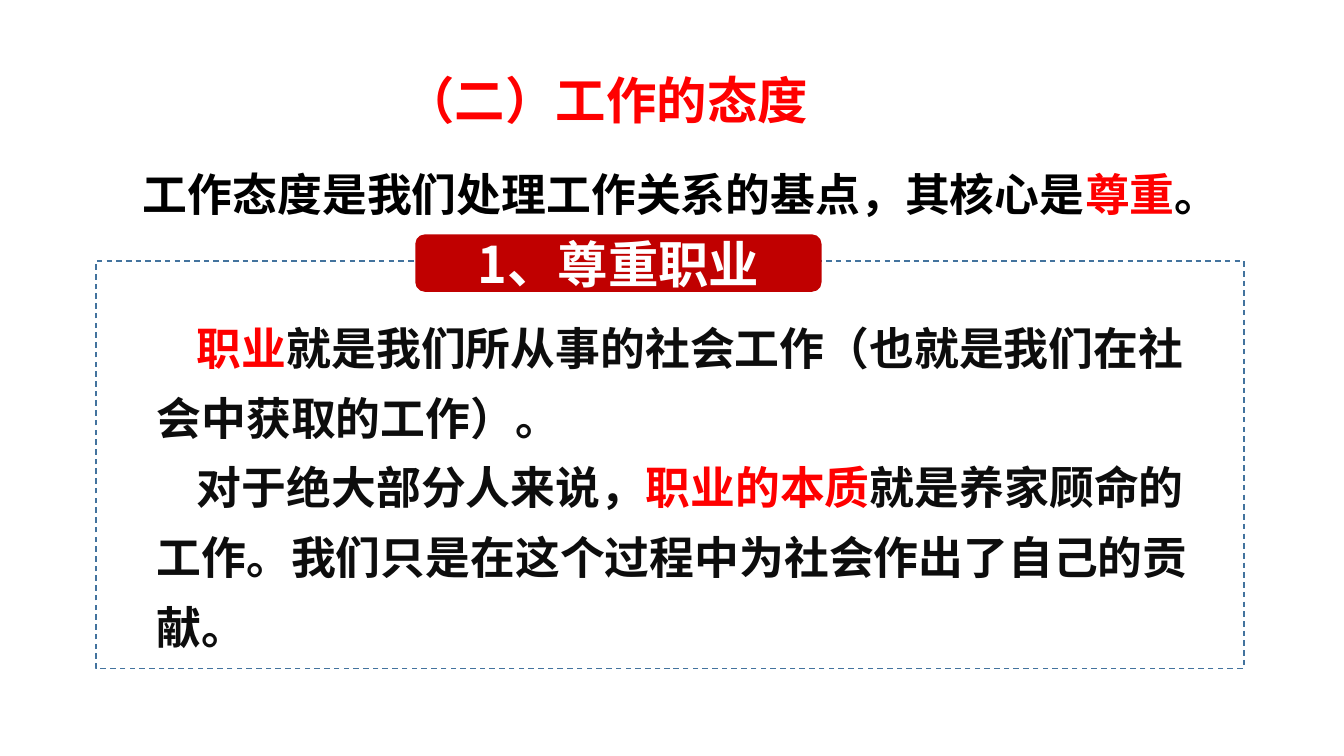
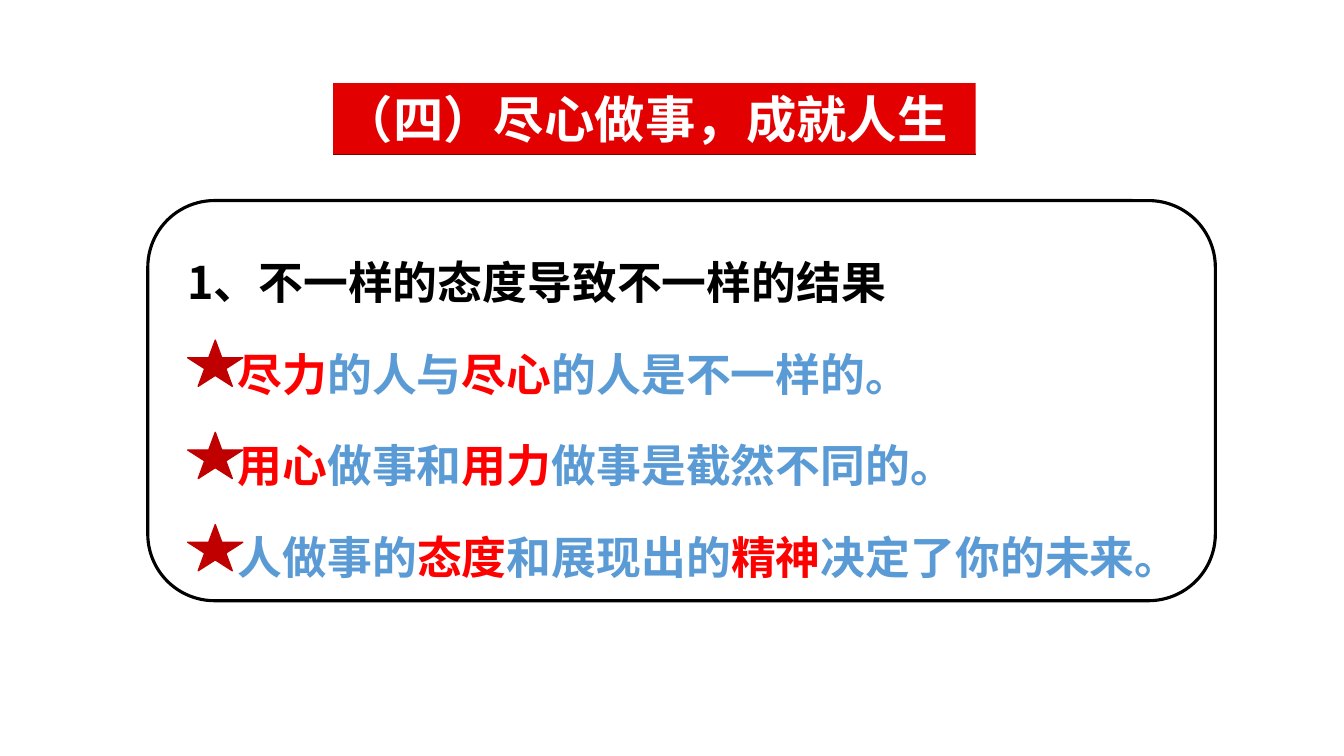
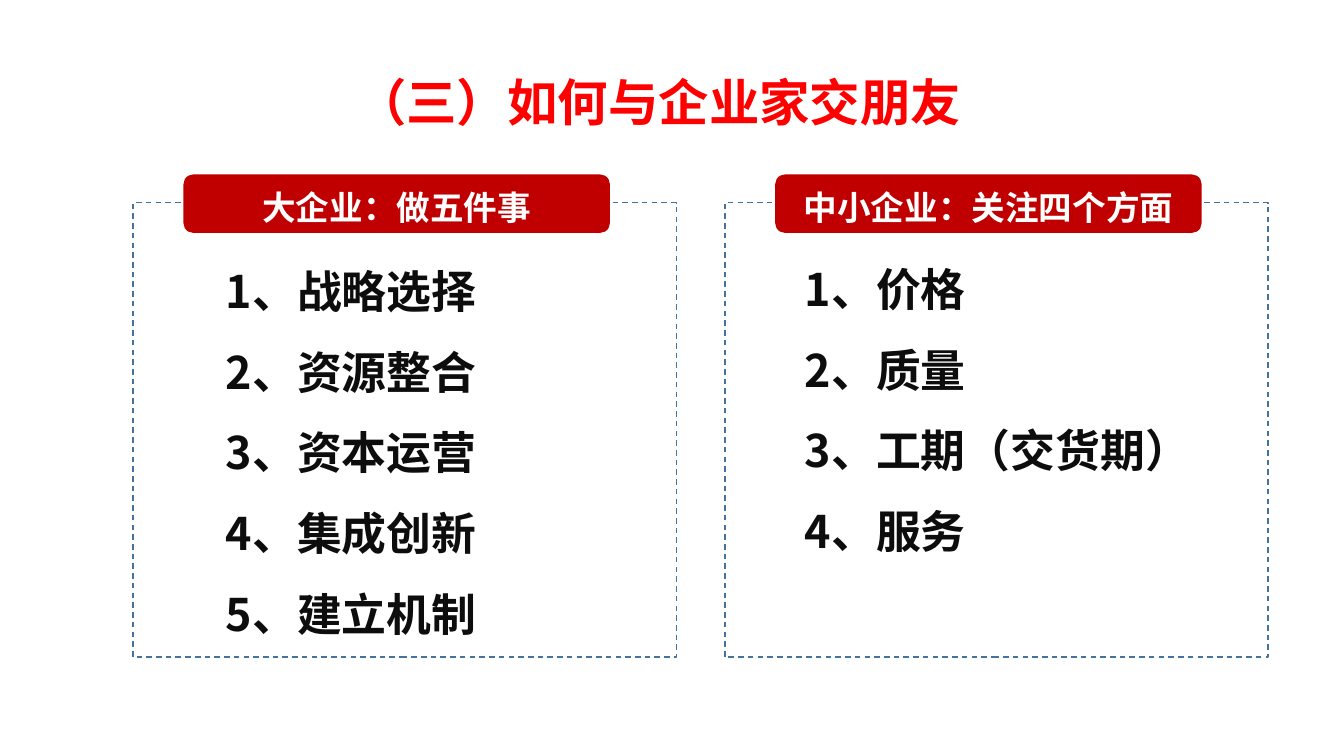
import pptx
import pptx.dml.color
import pptx.enum.dml
import pptx.enum.shapes
import pptx.enum.text
import pptx.oxml.ns
import pptx.util
from dataclasses import dataclass
from lxml import etree

SHAPE = pptx.enum.shapes.MSO_SHAPE
ALIGN = pptx.enum.text.PP_ALIGN
ANCHOR = pptx.enum.text.MSO_ANCHOR


@dataclass(frozen=True)
class Theme:
    red: str = "FF0000"
    band: str = "E30000"
    band_edge: str = "760303"
    pill: str = "C00000"
    blue: str = "5B9BD5"
    border: str = "43739E"
    black: str = "000000"
    ink: str = "0D0D0D"
    white: str = "FFFFFF"
    title_size: int = 36
    body_size: int = 32
    label_size: int = 24
    line_height: float = 1.2
    font: str = "Noto Sans CJK SC"
    latin: str = "Calibri"


THEME = Theme()


def rgb(code):
    return pptx.dml.color.RGBColor.from_string(code)


def write(frame, lines, *, color=THEME.ink, size=THEME.body_size, font=THEME.font,
          align=ALIGN.LEFT, anchor=ANCHOR.TOP, spacing=1, indent=0,
          margins=(0.1, 0.05, 0.1, 0.05)):
    """Fill a text frame; *starred* words are red, and a line may be (text, colour, left margin)."""
    frame.word_wrap = True
    frame.auto_size = pptx.enum.text.MSO_AUTO_SIZE.NONE
    frame.vertical_anchor = anchor
    (frame.margin_left, frame.margin_top,
     frame.margin_right, frame.margin_bottom) = map(pptx.util.Inches, margins)
    for index, line in enumerate(lines):
        text, line_color, left = (line, color, 0) if isinstance(line, str) else line
        paragraph = frame.add_paragraph() if index else frame.paragraphs[0]
        paragraph.alignment = align
        paragraph.space_before = pptx.util.Pt(0)
        paragraph.line_spacing = pptx.util.Pt(round(size * THEME.line_height * spacing, 1))
        properties = paragraph._p.get_or_add_pPr()
        properties.set("marL", str(pptx.util.Inches(left)))
        properties.set("indent", str(pptx.util.Inches(indent)))
        etree.SubElement(properties, pptx.oxml.ns.qn("a:buNone"))
        for part, words in enumerate(text.split("*")):
            if not words:
                continue
            run = paragraph.add_run()
            run.text = words
            run.font.size = pptx.util.Pt(size)
            run.font.bold = True
            run.font.color.rgb = rgb(THEME.red if part % 2 else line_color)
            run.font.name = font
            east_asian = etree.SubElement(run._r.get_or_add_rPr(), pptx.oxml.ns.qn("a:ea"))
            east_asian.set("typeface", THEME.font)


class Deck:
    """Holds the presentation and its current slide; places are percentages of the slide."""

    def __init__(self):
        self.show = pptx.Presentation()
        self.show.slide_width = pptx.util.Inches(13.33)
        self.show.slide_height = pptx.util.Inches(7.5)
        self.slide = None

    def box(self, left, top, width, height):
        across, down = self.show.slide_width / 100, self.show.slide_height / 100
        return int(left * across), int(top * down), int(width * across), int(height * down)

    def place(self, holder, at):
        holder.left, holder.top, holder.width, holder.height = self.box(*at)

    def new_slide(self, layout, title, left, top, width, *, color=THEME.red,
                  band=None, font=THEME.font):
        """Start a slide; band is the title's main and bottom-edge colour, white if not given."""
        self.slide = self.show.slides.add_slide(self.show.slide_layouts.get_by_name(layout))
        heading = self.slide.shapes.title
        self.place(heading, (left, top, width, 9.47))
        if band:
            heading.fill.gradient()
            heading.fill.gradient_angle = 270
            for stop, position, shade in zip(heading.fill.gradient_stops, (0.99, 1), band):
                stop.position = position
                stop.color.rgb = rgb(shade)
        else:
            heading.fill.solid()
            heading.fill.fore_color.rgb = rgb(THEME.white)
        write(heading.text_frame, [title], color=color, size=THEME.title_size, font=font)

    def body(self, index, at, lines, **style):
        holder = self.slide.placeholders[index]
        self.place(holder, at)
        write(holder.text_frame, lines, **style)

    def note(self, at, text, **style):
        write(self.slide.shapes.add_textbox(*self.box(*at)).text_frame, [text], **style)

    def shape(self, kind, at, *, fill=None, line=None, weight=1, dashed=False):
        drawn = self.slide.shapes.add_shape(kind, *self.box(*at))
        drawn.shadow.inherit = False
        if fill:
            drawn.fill.solid()
            drawn.fill.fore_color.rgb = rgb(fill)
        else:
            drawn.fill.background()
        if line:
            drawn.line.color.rgb = rgb(line)
            drawn.line.width = pptx.util.Pt(weight)
            if dashed:
                drawn.line.dash_style = pptx.enum.dml.MSO_LINE.DASH
        else:
            drawn.line.fill.background()
        return drawn

    def dashed_frame(self, at):
        self.shape(SHAPE.RECTANGLE, at, line=THEME.border, dashed=True)

    def pill(self, at, label, size, drop=0):
        """Draw a rounded label; drop is the space kept above its text, in inches."""
        drawn = self.shape(SHAPE.ROUNDED_RECTANGLE, at, fill=THEME.pill)
        write(drawn.text_frame, [label], color=THEME.white, size=size, align=ALIGN.CENTER,
              anchor=ANCHOR.MIDDLE, margins=(0, drop, 0, 0))

    def star(self, left, top):
        self.shape(SHAPE.STAR_5_POINT, (left, top, 4.1, 6.1), fill=THEME.pill, line=THEME.pill)


def work_attitude(deck):
    deck.new_slide("Title and Content", "（二）工作的态度", 29.35, 8.45, 33.23)
    deck.note((9.9, 21.35, 82, 8.53), "工作态度是我们处理工作关系的基点，其核心是*尊重*。",
              color=THEME.black, font=THEME.latin)
    deck.body(1, (10.9, 39.6, 80.55, 48), [
        "*职业*就是我们所从事的社会工作（也就是我们在社会中获取的工作）。",
        "对于绝大部分人来说，*职业的本质*就是养家顾命的工作。"
        "我们只是在这个过程中为社会作出了自己的贡献。",
    ], spacing=1.3, indent=0.4)
    deck.dashed_frame((7.14, 34.53, 85.43, 53.87))
    deck.pill((30.9, 31, 30.23, 7.6), "1、尊重职业", THEME.title_size)


def whole_heart(deck):
    deck.new_slide("Title and Content", "（四）尽心做事，成就人生", 24.75, 10.93, 47.85,
                   color=THEME.white, band=(THEME.band, THEME.band_edge), font=THEME.latin)
    panel = (11, 26.53, 79.43, 52.93)
    points = ["*尽力*的人与*尽心*的人是不一样的。",
              "*用心*做事和*用力*做事是截然不同的。",
              "人做事的*态度*和展现出的*精神*决定了你的未来。"]
    deck.body(1, panel,
              ["1、不一样的态度导致不一样的结果"] + [(point, THEME.blue, 0.5) for point in points],
              color=THEME.black, spacing=1.7, anchor=ANCHOR.MIDDLE,
              margins=(0.39, 0.05, 0.1, 0.06))
    deck.shape(SHAPE.ROUNDED_RECTANGLE, panel, line=THEME.black, weight=2.25)
    for row in range(len(points)):
        deck.star(13.97, 45 + 12.2 * row)


def entrepreneur_friends(deck):
    deck.new_slide("Two Content", "（三）如何与企业家交朋友", 25.75, 8.7, 47.7)
    companies = [
        ("大企业：做五件事", 16.05, 30.67, 27,
         ["战略选择", "资源整合", "资本运营", "集成创新", "建立机制"]),
        ("中小企业：关注四个方面", 59.13, 30.4, 30.23,
         ["价格", "质量", "工期（交货期）", "服务"]),
    ]
    for column, (label, list_left, list_top, list_width, items) in enumerate(companies):
        left = 9.9 + 44.03 * column
        deck.body(column + 1, (list_left, list_top, list_width, 55.2),
                  [f"{number}、{item}" for number, item in enumerate(items, 1)], spacing=1.5)
        deck.dashed_frame((left, 26.8, 40.43, 60.13))
        deck.pill((left + 3.75, 23.07, 31.73, 7.73), label, THEME.label_size, drop=0.06)


def main():
    deck = Deck()
    for build in (work_attitude, whole_heart, entrepreneur_friends):
        build(deck)
    deck.show.save("out.pptx")


if __name__ == "__main__":
    main()
